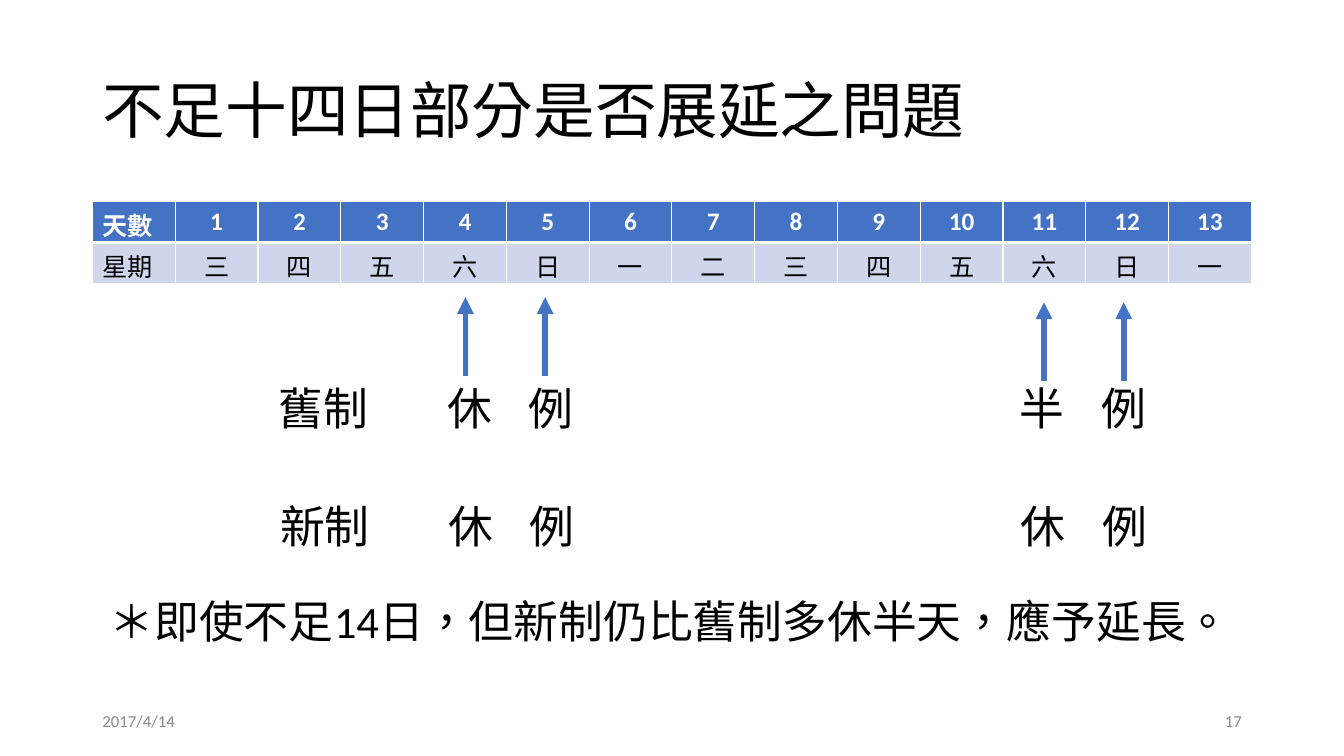
from pptx import Presentation
from pptx.dml.color import RGBColor
from pptx.enum.lang import MSO_LANGUAGE_ID
from pptx.enum.shapes import MSO_CONNECTOR
from pptx.enum.text import MSO_ANCHOR, PP_ALIGN
from pptx.oxml.ns import qn
from pptx.util import Cm, Pt
from lxml.etree import SubElement

BLUE, PALE, WHITE, BLACK, GREY = "4472C4", "CFD5EA", "FFFFFF", "000000", "8C8C8C"
LEFT, CENTER, RIGHT = PP_ALIGN.LEFT, PP_ALIGN.CENTER, PP_ALIGN.RIGHT


def color(code):
    return RGBColor.from_string(code)


class Page:
    """Holds the text style and the current slide."""

    face = "Calibri"

    def __init__(self, slide):
        self.shapes = slide.shapes

    def style(self, para, size, ink, align=LEFT, bold=False):
        para.alignment = align
        font = para.font
        font.name, font.size, font.bold = self.face, Pt(size), bold
        font.color.rgb = color(ink)
        for run in para.runs:
            run.font.language_id = MSO_LANGUAGE_ID.TRADITIONAL_CHINESE

    def text(self, words, x, y, w, h, size=32, ink=BLACK, align=LEFT,
             anchor=MSO_ANCHOR.TOP):
        frame = self.shapes.add_textbox(Cm(x), Cm(y), Cm(w), Cm(h)).text_frame
        frame.word_wrap = True
        frame.vertical_anchor = anchor
        frame.text = words
        para = frame.paragraphs[0]
        self.style(para, size, ink, align)
        return para

    def arrow(self, x, top, length):
        line = self.shapes.add_connector(
            MSO_CONNECTOR.STRAIGHT, Cm(x), Cm(top + length), Cm(x), Cm(top))
        line.line.color.rgb = color(BLUE)
        line.line.width = Pt(4)
        SubElement(line.line._get_or_add_ln(), qn("a:tailEnd"), type="triangle")
        SubElement(line._element.spPr, qn("a:effectLst"))

    def border(self, cell, side, width):
        edge = SubElement(cell._tc.get_or_add_tcPr(), qn(f"a:{side}"),
                          w=str(Pt(width)))
        fill = SubElement(edge, qn("a:solidFill"))
        SubElement(fill, qn("a:srgbClr"), val=WHITE)

    def table(self, rows, x, y, w, h):
        grid = self.shapes.add_table(
            len(rows), len(rows[0]), Cm(x), Cm(y), Cm(w), Cm(h)).table
        for r, row in enumerate(rows):
            head = r == 0
            for c, words in enumerate(row):
                cell = grid.cell(r, c)
                cell.text = words
                self.style(cell.text_frame.paragraphs[0], 18,
                           WHITE if head else BLACK,
                           CENTER if c else LEFT, head)
                # Borders come before the fill in the cell properties
                for side in ("lnL", "lnR", "lnT", "lnB"):
                    thick = side == ("lnB" if head else "lnT")
                    self.border(cell, side, 3 if thick else 1)
                cell.fill.solid()
                cell.fill.fore_color.rgb = color(BLUE if head else PALE)


def main():
    deck = Presentation()
    deck.slide_width, deck.slide_height = Cm(33.87), Cm(19.05)
    page = Page(deck.slides.add_slide(deck.slide_layouts[6]))

    # Title
    title = page.text("不足十四日部分是否展延之問題", 2.33, 1.02, 29.21, 3.68,
                      size=44, anchor=MSO_ANCHOR.MIDDLE)
    title.line_spacing = 0.9

    # Days and weekdays
    days = ["天數"] + [str(n) for n in range(1, 14)]
    week = ["星期"] + list("三四五六日一二三四五六日一")
    page.table([days, week], 2.33, 5.08, 29.21, 2.06)

    # Arrows up to the rest days
    for x, top in ((11.73, 7.49), (13.74, 7.49), (26.31, 7.62), (28.32, 7.62)):
        page.arrow(x, top, 1.98)

    # Old and new rules
    for name, marks, y, shift in (("舊制", "休例半例", 9.48, 0),
                                  ("新制", "休例休例", 12.44, 0.03)):
        page.text(name, 6.78 + shift, y, 2.95, 1.63)
        for mark, x in zip(marks, (11.02, 13.06, 25.45, 27.51)):
            page.text(mark, x + shift, y, 1.55, 1.63, align=CENTER)

    # Conclusion
    page.text("＊即使不足14日，但新制仍比舊制多休半天，應予延長。",
              2.51, 14.83, 28.58, 1.63)

    # Date and page number
    for words, x, align in (("2017/4/14", 2.33, LEFT), ("17", 23.93, RIGHT)):
        page.text(words, x, 17.65, 7.62, 1.02, 12, GREY, align,
                  MSO_ANCHOR.MIDDLE)

    deck.save("out.pptx")


if __name__ == "__main__":
    main()
